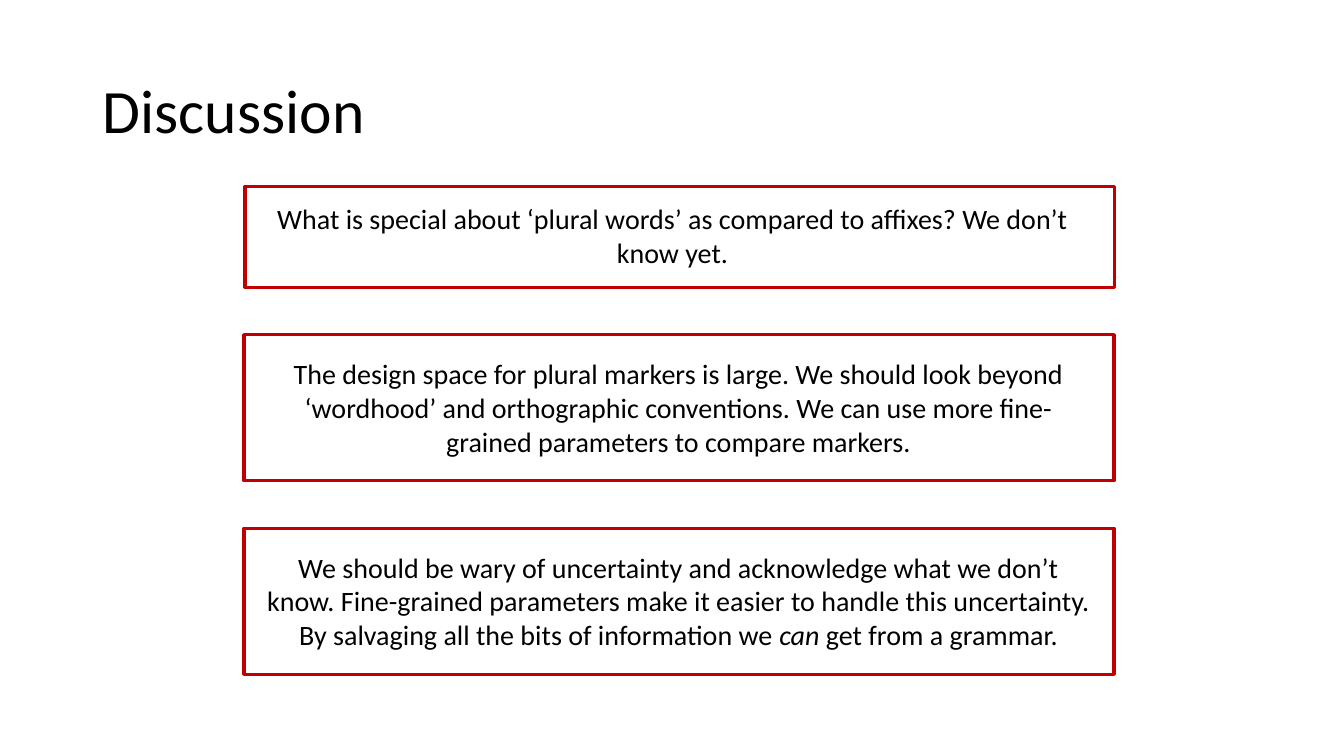
from dataclasses import dataclass

import pptx
import pptx.dml.color
import pptx.enum.shapes
import pptx.enum.text
import pptx.util

Inches = pptx.util.Inches
COLORS = {"text": "000000", "border": "C00000"}


@dataclass
class Box:
    left: float
    top: float
    width: float
    height: float


@dataclass
class Statement:
    frame: Box
    label: Box
    runs: list[tuple[str, bool]]


STATEMENTS = [
    Statement(
        Box(2.43, 1.85, 8.62, 1),
        Box(2.54, 1.95, 8.26, 1.11),
        [("What is special about ‘plural words’ as compared to affixes? "
          "We don’t know yet.", False)],
    ),
    Statement(
        Box(2.42, 3.32, 8.63, 1.45),
        Box(2.51, 3.49, 8.44, 1.11),
        [("The design space for plural markers is large. We should look beyond "
          "‘wordhood’ and orthographic conventions. We can use more "
          "fine-grained parameters to compare markers.", False)],
    ),
    Statement(
        Box(2.42, 5.24, 8.63, 1.45),
        Box(2.51, 5.41, 8.44, 1.11),
        [("We should be wary of uncertainty and acknowledge what we don’t know. "
          "Fine-grained parameters make it easier to handle this uncertainty. "
          "By salvaging all the bits of information we ", False),
         ("can", True),
         (" get from a grammar.", False)],
    ),
]


def color(name: str) -> pptx.dml.color.RGBColor:
    return pptx.dml.color.RGBColor.from_string(COLORS[name])


def lengths(box: Box) -> list[int]:
    return [Inches(v) for v in (box.left, box.top, box.width, box.height)]


def add_run(p, text: str, size: int, italic: bool = False) -> None:
    r = p.add_run()
    r.text = text
    formats = {"name": "Calibri", "size": pptx.util.Pt(size), "italic": italic}
    for key, value in formats.items():
        setattr(r.font, key, value)
    r.font.color.rgb = color("text")


def add_title(s, text: str, box: Box) -> None:
    sp = s.shapes.title
    sp.left, sp.top, sp.width, sp.height = lengths(box)
    tf = sp.text_frame
    tf.word_wrap = True
    tf.vertical_anchor = pptx.enum.text.MSO_ANCHOR.MIDDLE
    p = tf.paragraphs[0]
    p.alignment = pptx.enum.text.PP_ALIGN.LEFT
    p.line_spacing = 0.9
    add_run(p, text, 44)


def add_statement(s, statement: Statement) -> None:
    sp = s.shapes.add_shape(
        pptx.enum.shapes.MSO_SHAPE.RECTANGLE, *lengths(statement.frame))
    sp.shadow.inherit = False
    sp.fill.background()
    sp.line.color.rgb = color("border")
    sp.line.width = pptx.util.Pt(2.25)

    tf = s.shapes.add_textbox(*lengths(statement.label)).text_frame
    tf.word_wrap = True
    tf.auto_size = pptx.enum.text.MSO_AUTO_SIZE.SHAPE_TO_FIT_TEXT
    p = tf.paragraphs[0]
    p.alignment = pptx.enum.text.PP_ALIGN.CENTER
    for text, italic in statement.runs:
        add_run(p, text, 20, italic)


def main() -> None:
    prs = pptx.Presentation()
    prs.slide_width, prs.slide_height = Inches(13.33), Inches(7.5)
    s = prs.slides.add_slide(prs.slide_layouts.get_by_name("Title Only"))
    add_title(s, "Discussion", Box(0.92, 0.4, 11.5, 1.45))
    for statement in STATEMENTS:
        add_statement(s, statement)
    prs.save("out.pptx")


if __name__ == "__main__":
    main()
